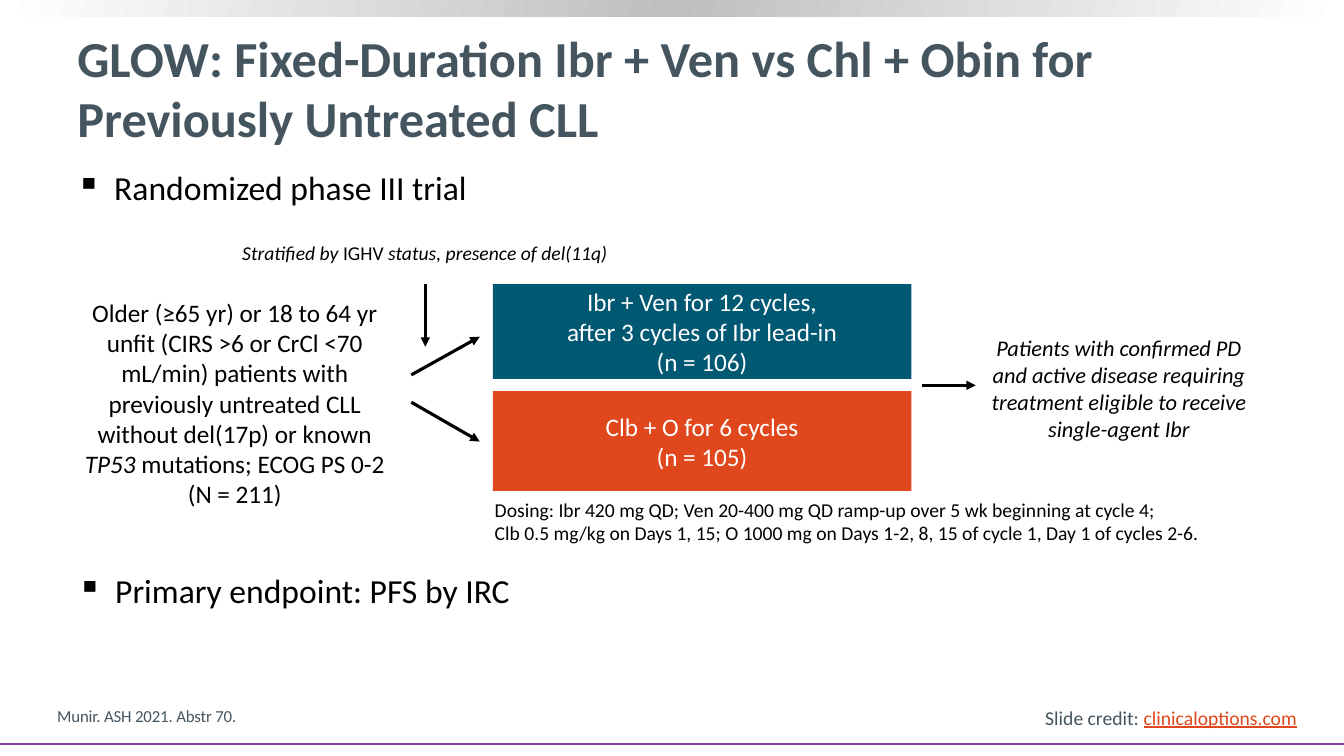
"""Build the GLOW trial design slide."""
from copy import deepcopy
from dataclasses import dataclass
from typing import Optional

from lxml import etree
from pptx import Presentation
from pptx.dml.color import RGBColor
from pptx.enum import shapes, text
from pptx.oxml.ns import qn
from pptx.util import Pt


@dataclass(frozen=True)
class Theme:
    font: str = "Calibri"
    ink: str = "000000"
    slate: str = "455560"
    white: str = "FFFFFF"
    silver: str = "BFBFBF"
    teal: str = "015873"
    orange: str = "E1471D"
    purple: str = "7F3F98"
    title: float = 36
    bullet: float = 24
    body: float = 18
    outcome: float = 16
    note: float = 14
    citation: float = 12


THEME = Theme()


@dataclass(frozen=True)
class Box:
    left: float
    top: float
    width: float
    height: float


@dataclass(frozen=True)
class Span:
    words: str
    italic: bool = False
    color: Optional[str] = None
    underline: bool = False


@dataclass(frozen=True)
class Label:
    box: Box
    lines: tuple[tuple[Span, ...], ...]
    size: float
    color: str = THEME.ink
    align: text.PP_ALIGN = text.PP_ALIGN.LEFT
    anchor: text.MSO_ANCHOR = text.MSO_ANCHOR.TOP
    bold: bool = False
    wrap: bool = True
    bullet: bool = False
    tracking: float = 0
    fill: Optional[str] = None


@dataclass(frozen=True)
class Line:
    x1: float
    y1: float
    x2: float
    y2: float
    color: str = THEME.ink
    weight: float = 2.25
    arrow: bool = True


CENTER, MIDDLE = text.PP_ALIGN.CENTER, text.MSO_ANCHOR.MIDDLE
WIDTH, HEIGHT = 960, 540
ARM_LEFT, ARM_WIDTH = 352, 299
FORK_X, FORK_TIP_X = 293.8, 342.7


def plain(*lines: str, italic: bool = False) -> tuple[tuple[Span, ...], ...]:
    """Return one single-span paragraph per line."""
    return tuple((Span(line, italic),) for line in lines)


LABELS = (
    Label(Box(739.5, 500.4, 195.8, 24.5),
          ((Span("Slide credit: "), Span("clinicaloptions.com", color=THEME.orange, underline=True)),),
          THEME.note, THEME.slate, wrap=False),
    Label(Box(47.5, 118.8, 856.8, 40), plain("Randomized phase III trial"), THEME.bullet, bullet=True),
    Label(Box(48.2, 18.7, 877, 87.1),
          plain("GLOW: Fixed-Duration Ibr + Ven vs Chl + Obin for Previously Untreated CLL"),
          THEME.title, THEME.slate, anchor=MIDDLE, bold=True),
    Label(Box(47.5, 208.8, 240.5, 159.8),
          ((Span("Older (≥65 yr) or 18 to 64 yr unfit (CIRS >6 or CrCl <70 mL/min) patients with "
                 "previously untreated CLL without del(17p) or known "),
            Span("TP53", italic=True), Span(" mutations; ECOG PS 0-2")),
           (Span("(N = 211)"),)),
          THEME.body, align=CENTER),
    Label(Box(699.1, 234.7, 200.2, 85),
          plain("Patients with confirmed PD and active disease requiring treatment eligible "
                "to receive single-agent Ibr", italic=True),
          THEME.outcome, align=CENTER, anchor=MIDDLE),
    Label(Box(ARM_LEFT, 203, ARM_WIDTH, 67.7),
          plain("Ibr + Ven for 12 cycles,", "after 3 cycles of Ibr lead-in", "(n = 106)"),
          THEME.body, THEME.white, CENTER, MIDDLE, wrap=False, fill=THEME.teal),
    Label(Box(ARM_LEFT, 279.4, ARM_WIDTH, 71.3), plain("Clb + O for 6 cycles", "(n = 105)"),
          THEME.body, THEME.white, CENTER, MIDDLE, wrap=False, fill=THEME.orange),
    Label(Box(33.8, 500.4, 618.5, 21.6), plain("Munir. ASH 2021. Abstr 70."),
          THEME.citation, THEME.slate, anchor=text.MSO_ANCHOR.BOTTOM, tracking=-0.1),
    Label(Box(133.9, 168.5, 339.1, 24.5),
          ((Span("Stratified by ", italic=True), Span("IGHV"),
            Span(" status, presence of del(11q)", italic=True)),),
          THEME.note, align=CENTER),
    Label(Box(48.2, 406.8, 424.8, 88.6), plain("Primary endpoint: PFS by IRC"),
          THEME.bullet, bullet=True),
    Label(Box(346.3, 352.1, 532.1, 41),
          plain("Dosing: Ibr 420 mg QD; Ven 20-400 mg QD ramp-up over 5 wk beginning at cycle 4;",
                "Clb 0.5 mg/kg on Days 1, 15; O 1000 mg on Days 1-2, 8, 15 of cycle 1, "
                "Day 1 of cycles 2-6."),
          THEME.note),
)

LINES = (
    Line(0, 531.4, WIDTH, 531.4, THEME.purple, 1.5, arrow=False),
    Line(658.8, 275.2, 697, 275.2),
    Line(FORK_X, 287.3, FORK_TIP_X, 315.4),
    Line(FORK_X, 267.8, FORK_TIP_X, 240.5),
    Line(303.8, 203, 303.8, 247.7),
)


def place(box: Box) -> tuple[Pt, Pt, Pt, Pt]:
    """Return the box as lengths."""
    return Pt(box.left), Pt(box.top), Pt(box.width), Pt(box.height)


def add_rectangle(slide, box: Box):
    """Add a rectangle without outline or shadow."""
    rectangle = slide.shapes.add_shape(shapes.MSO_SHAPE.RECTANGLE, *place(box))
    rectangle.shadow.inherit = False
    rectangle.line.fill.background()
    return rectangle


def add_band(slide) -> None:
    """Add the white-silver-white band along the top edge."""
    band = add_rectangle(slide, Box(0, 0, WIDTH, 11.5))
    band.fill.gradient()
    band.fill.gradient_angle = 170
    stops = band._element.spPr.find(qn("a:gradFill")).find(qn("a:gsLst"))
    stops.insert(1, deepcopy(stops[0]))
    for stop, position, color in zip(band.fill.gradient_stops, (0, 0.5, 1),
                                     (THEME.white, THEME.silver, THEME.white)):
        stop.position = position
        stop.color.rgb = RGBColor.from_string(color)


def add_bullet(paragraph) -> None:
    """Give the paragraph a square bullet and a hanging indent."""
    properties = paragraph._p.get_or_add_pPr()
    properties.set("marL", str(Pt(27)))
    properties.set("indent", str(-Pt(27)))
    color = etree.SubElement(properties, qn("a:buClr"))
    etree.SubElement(color, qn("a:srgbClr"), val=THEME.ink)
    etree.SubElement(properties, qn("a:buChar"), char="▪")
    paragraph.line_spacing = 0.9
    paragraph.space_after = Pt(7)


def add_label(slide, label: Label) -> None:
    """Add a text box, or a filled rectangle with text."""
    if label.fill:
        holder = add_rectangle(slide, label.box)
        holder.fill.solid()
        holder.fill.fore_color.rgb = RGBColor.from_string(label.fill)
    else:
        holder = slide.shapes.add_textbox(*place(label.box))
    frame = holder.text_frame
    frame.word_wrap = label.wrap
    frame.vertical_anchor = label.anchor
    frame.text = "\n".join(line[0].words for line in label.lines)
    for paragraph, line in zip(frame.paragraphs, label.lines):
        paragraph.alignment = label.align
        if label.bullet:
            add_bullet(paragraph)
        for span in line[1:]:
            paragraph.add_run().text = span.words
        for run, span in zip(paragraph.runs, line):
            run.font.name = THEME.font
            run.font.size = Pt(label.size)
            run.font.bold = label.bold
            run.font.italic = span.italic
            run.font.underline = span.underline
            run.font.color.rgb = RGBColor.from_string(span.color or label.color)
            if label.tracking:
                run._r.get_or_add_rPr().set("spc", str(round(label.tracking * 100)))


def add_line(slide, line: Line) -> None:
    """Add a straight line, with an arrowhead if asked."""
    connector = slide.shapes.add_connector(
        shapes.MSO_CONNECTOR.STRAIGHT, Pt(line.x1), Pt(line.y1), Pt(line.x2), Pt(line.y2))
    connector.line.color.rgb = RGBColor.from_string(line.color)
    connector.line.width = Pt(line.weight)
    if line.arrow:
        etree.SubElement(connector.line._get_or_add_ln(), qn("a:tailEnd"), type="triangle")
    etree.SubElement(connector._element.spPr, qn("a:effectLst"))


def main() -> None:
    """Build and save the slide."""
    deck = Presentation()
    deck.slide_width, deck.slide_height = Pt(WIDTH), Pt(HEIGHT)
    slide = deck.slides.add_slide(deck.slide_layouts[6])
    add_band(slide)
    for line in LINES:
        add_line(slide, line)
    for label in LABELS:
        add_label(slide, label)
    deck.save("out.pptx")


if __name__ == "__main__":
    main()
